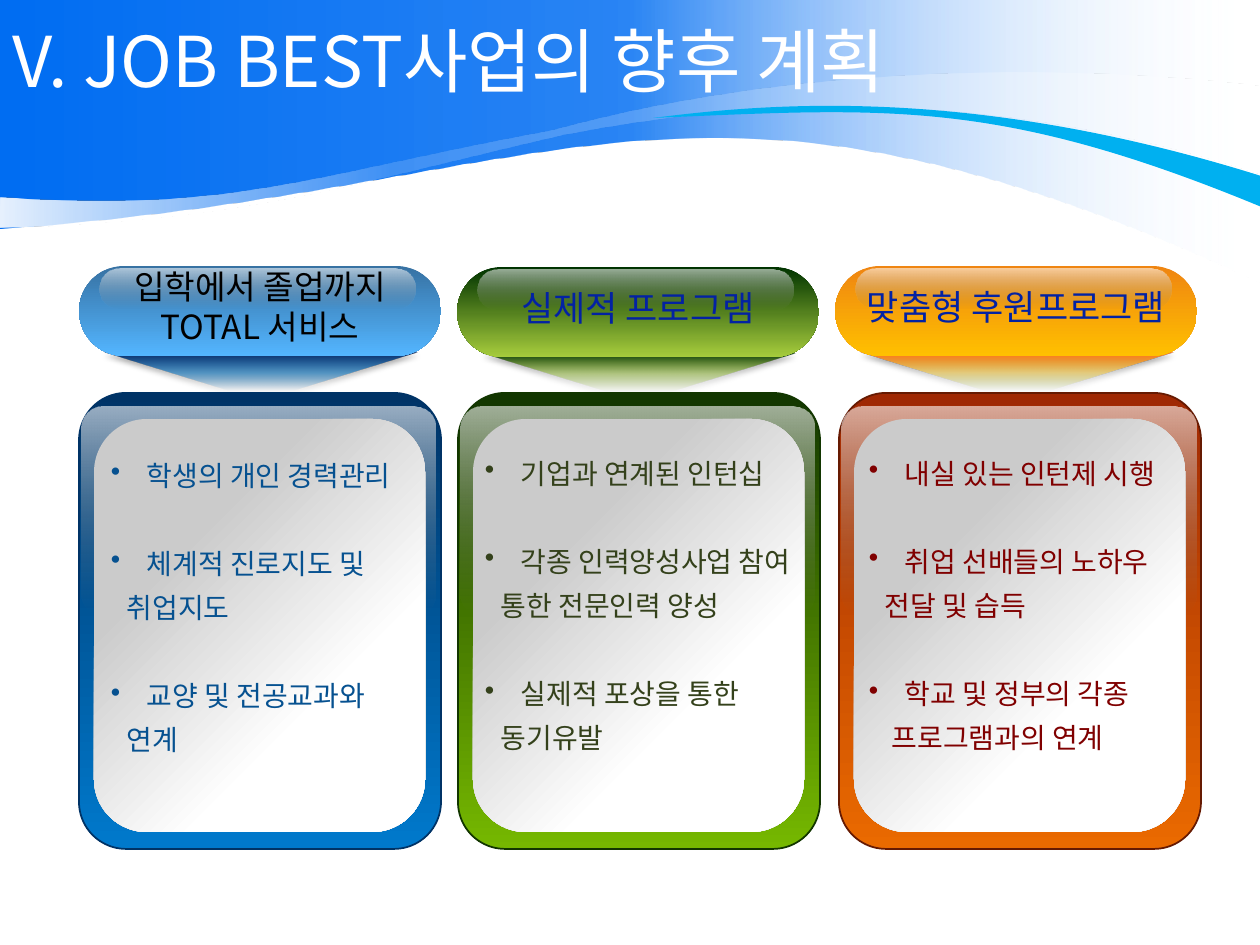
from dataclasses import dataclass
from itertools import chain

from lxml import etree
from pptx import Presentation
from pptx import util as u
from pptx.dml.color import RGBColor
from pptx.enum import shapes, text
from pptx.oxml import parse_xml
from pptx.oxml.ns import nsdecls, qn

PX = u.Inches(1) / 126
GLOSS = [(0, "FFFFFF", 60), (100, "767676", 0)]


@dataclass(frozen=True)
class Theme:
    """Colours and type sizes of the slide."""
    font: str = "Noto Sans CJK KR"
    white: str = "FFFFFF"
    blue: str = "006DF2"
    accent: str = "00B0F0"
    title_size: int = 40
    body_size: int = 16
    leading: float = 1.2
    paragraph_gap: int = 6
    paper: tuple = ((29, "CBCBCB", 100), (69, "FFFFFF", 100))


THEME = Theme()


def px(value):
    """Turn pixels into EMU."""
    return u.Emu(round(value * PX))


def apply(target, values):
    """Set each attribute named in a dict."""
    for name, value in values.items():
        setattr(target, name, value)


def paint(shape, stops, angle):
    """Fill a shape with a gradient of (position, colour, opacity) stops."""
    shape.fill.background()
    marks = "".join(
        f'<a:gs pos="{place * 1000}"><a:srgbClr val="{colour}">'
        f'<a:alpha val="{opacity * 1000}"/></a:srgbClr></a:gs>'
        for place, colour, opacity in stops)
    gradient = parse_xml(
        f'<a:gradFill {nsdecls("a")} rotWithShape="1"><a:gsLst>{marks}</a:gsLst>'
        f'<a:lin ang="{angle * 60000}" scaled="0"/></a:gradFill>')
    properties = shape._element.spPr
    properties.replace(properties.find(qn("a:noFill")), gradient)


def add_block(slide, kind, box, adjustment, stops, angle=90, outline=None):
    """Add a gradient preset shape."""
    shape = slide.shapes.add_shape(kind, *map(px, box))
    shape.shadow.inherit = False
    shape.adjustments[0] = adjustment
    paint(shape, stops, angle)
    if outline:
        shape.line.color.rgb = RGBColor.from_string(outline)
        shape.line.width = u.Pt(1)
    else:
        shape.line.fill.background()
    return shape


def add_round(slide, *args, **kwargs):
    """Add a gradient rounded rectangle."""
    return add_block(slide, shapes.MSO_SHAPE.ROUNDED_RECTANGLE, *args, **kwargs)


def add_run(paragraph, words, size, colour):
    """Add one run in the theme font."""
    run = paragraph.add_run()
    run.text = words
    apply(run.font, {"name": THEME.font, "size": u.Pt(size)})
    run.font.color.rgb = RGBColor.from_string(colour)
    east_asian = etree.SubElement(run.font._element, qn("a:ea"))
    east_asian.set("typeface", THEME.font)


def add_frame(slide, box, anchor, side_inset):
    """Add a wrapping text box and return its text frame."""
    frame = slide.shapes.add_textbox(*map(px, box)).text_frame
    apply(frame, {"word_wrap": True, "vertical_anchor": anchor,
                  "margin_left": px(side_inset), "margin_right": 0})
    return frame


def next_paragraph(frame, index):
    """Return the first paragraph or a new one."""
    return frame.add_paragraph() if index else frame.paragraphs[0]


def add_wave(slide, box, start, segments):
    """Add an outline of lines and cubic curves inside the banner box."""
    left, top = box[:2]
    points = [(px(left + x), px(top + y)) for x, y in chain([start], *segments)]
    builder = slide.shapes.build_freeform(*points[0])
    builder.add_line_segments(points[1:], close=True)
    wave = builder.convert_to_shape()
    wave.shadow.inherit = False
    wave.line.fill.background()
    lines = wave._element.spPr.iter(qn("a:lnTo"))
    steps = iter(list(lines))
    for segment in segments:
        group = [next(steps) for _ in segment]
        if len(group) == 3:
            curve = etree.Element(qn("a:cubicBezTo"))
            group[0].addprevious(curve)
            for step in group:
                curve.append(step[0])
                step.getparent().remove(step)
    return wave


def add_banner(slide, box, title):
    """Draw the wavy banner and its title."""
    left, top, width, height = box
    band = add_wave(slide, box, (1261, 0), [
        [(-1, 0)], [(-1, 228)], [(567, 189), (687, 18), (1261, 282)]])
    paint(band, [(0, THEME.blue, 100), (50, THEME.blue, 83), (100, THEME.white, 0)], 0)
    ribbon = add_wave(slide, box, (1261, 87), [
        [(1203, 79), (872, 43), (554, 130)], [(305, 176), (234, 213), (1, 197)],
        [(-1, 228)], [(256, 218), (335, 188), (564, 135)],
        [(684, 113), (940, 69), (1261, 175)]])
    paint(ribbon, [(0, THEME.white, 90), (31, THEME.white, 16), (86, THEME.white, 24)], 0)
    accent = add_wave(slide, box, (653, 118), [
        [(887, 108), (999, 98), (1264, 208)], [(1261, 176)],
        [(977, 87), (777, 102), (653, 118)]])
    accent.fill.solid()
    accent.fill.fore_color.rgb = RGBColor.from_string(THEME.accent)
    frame = add_frame(slide, (left, top + 29, width - 83, 60), text.MSO_ANCHOR.MIDDLE, 13)
    add_run(frame.paragraphs[0], title, THEME.title_size, THEME.white)


def add_heading(slide, box, column):
    """Draw the pill heading with its downward tab."""
    left, top, width, height = box
    tab = add_block(slide, shapes.MSO_SHAPE.TRAPEZOID, (left + 26, top + 87, 312, 43),
                    3.27, column["tab"])
    for direction in ("flipH", "flipV"):
        tab._element.spPr.xfrm.set(direction, "1")
    effects = tab._element.spPr.find(qn("a:effectLst"))
    effects.append(parse_xml(
        f'<a:outerShdw {nsdecls("a")} blurRad="{u.Pt(3.1)}" dist="{u.Pt(1.8)}" dir="5400000">'
        '<a:srgbClr val="000000"><a:alpha val="35000"/></a:srgbClr></a:outerShdw>'))
    add_round(slide, box, 0.5, column["pill"])
    add_round(slide, (left + 21, top + 3, 316, 40), 0.5, GLOSS)
    frame = add_frame(slide, (left, top, width, height - 10), text.MSO_ANCHOR.MIDDLE, 0)
    size = column["label_size"]
    for index, line in enumerate(column["label"]):
        paragraph = next_paragraph(frame, index)
        apply(paragraph, {"alignment": text.PP_ALIGN.CENTER,
                          "line_spacing": u.Pt(size * THEME.leading)})
        add_run(paragraph, line, size, column["label_colour"])


def add_panel(slide, box, column):
    """Draw the glossy panel with its bulleted points."""
    left, top, width, height = box
    add_round(slide, box, 0.13, column["panel"], outline=column["outline"])
    add_round(slide, (left + 3, top + 14, 354, 207), 0.1, GLOSS)
    add_round(slide, (left + 15, top + 26, 331, 413), 0.16, THEME.paper, angle=45)
    inset, drop = column["text_at"]
    frame = add_frame(slide, (left + inset, top + drop, 340, 349), text.MSO_ANCHOR.TOP, 13)
    leading = THEME.body_size * THEME.leading
    lines = [(line, row) for point in column["points"] for row, line in enumerate(point)]
    for index, (line, row) in enumerate(lines):
        paragraph = next_paragraph(frame, index)
        properties = paragraph._p.get_or_add_pPr()
        indent = column["last_indent"] if index == len(lines) - 1 else 16
        properties.set("marL", str(px(indent if row else 36)))
        properties.set("indent", str(px(0 if row else -36)))
        if not row:
            etree.SubElement(properties, qn("a:buChar")).set("char", "•")
        gap = THEME.paragraph_gap if row else leading + 2 * THEME.paragraph_gap
        apply(paragraph, {"line_spacing": u.Pt(leading),
                          "space_before": u.Pt(gap if index else 0)})
        add_run(paragraph, line, THEME.body_size, column["colour"])


COLUMNS = [
    {"heading_at": (79, 266), "panel_at": 79, "text_at": (19, 59), "last_indent": 16,
     "tab": [(12, "0070C0", 0), (53, "0070C0", 58), (100, "002060", 100)],
     "pill": [(0, "3772A3", 100), (100, "53B5FF", 100)],
     "panel": [(0, "003366", 100), (100, "0079CC", 100)], "outline": "003366",
     "label": ["입학에서 졸업까지", "TOTAL 서비스"], "label_size": 19,
     "label_colour": "000000", "colour": "065190",
     "points": [["학생의 개인 경력관리"], ["체계적 진로지도 및", "취업지도"],
                ["교양 및 전공교과와", "연계"]]},
    {"heading_at": (457, 267), "panel_at": 458, "text_at": (14, 57), "last_indent": 16,
     "tab": [(12, "7CB107", 0), (53, "7CB107", 40), (100, "003300", 100)],
     "pill": [(0, "003300", 100), (100, "A6CC3C", 100)],
     "panel": [(0, "123600", 100), (100, "76B800", 100)], "outline": "123600",
     "label": ["실제적 프로그램"], "label_size": 20,
     "label_colour": "0322A3", "colour": "34411B",
     "points": [["기업과 연계된 인턴십"], ["각종 인력양성사업 참여", "통한 전문인력 양성"],
                ["실제적 포상을 통한", "동기유발"]]},
    {"heading_at": (835, 266), "panel_at": 839, "text_at": (17, 57), "last_indent": 23,
     "tab": [(12, "7CB107", 0), (53, "FFC000", 40), (100, "FE690E", 100)],
     "pill": [(0, "EF8511", 100), (100, "FFC000", 100)],
     "panel": [(0, "9F2803", 100), (100, "EA6A00", 100)], "outline": "661A02",
     "label": ["맞춤형 후원프로그램"], "label_size": 20,
     "label_colour": "0322A3", "colour": "800000",
     "points": [["내실 있는 인턴제 시행"], ["취업 선배들의 노하우", "전달 및 습득"],
                ["학교 및 정부의 각종", "프로그램과의 연계"]]},
]


def main():
    """Build the slide and save it."""
    presentation = Presentation()
    apply(presentation, {"slide_width": px(1260), "slide_height": px(945)})
    slide = presentation.slides.add_slide(presentation.slide_layouts[6])
    add_banner(slide, (0, 0, 1260, 282), "V. JOB BEST사업의 향후 계획")
    for column in COLUMNS:
        add_heading(slide, (*column["heading_at"], 362, 90), column)
        add_panel(slide, (column["panel_at"], 393, 362, 456), column)
    presentation.save("out.pptx")


if __name__ == "__main__":
    main()
